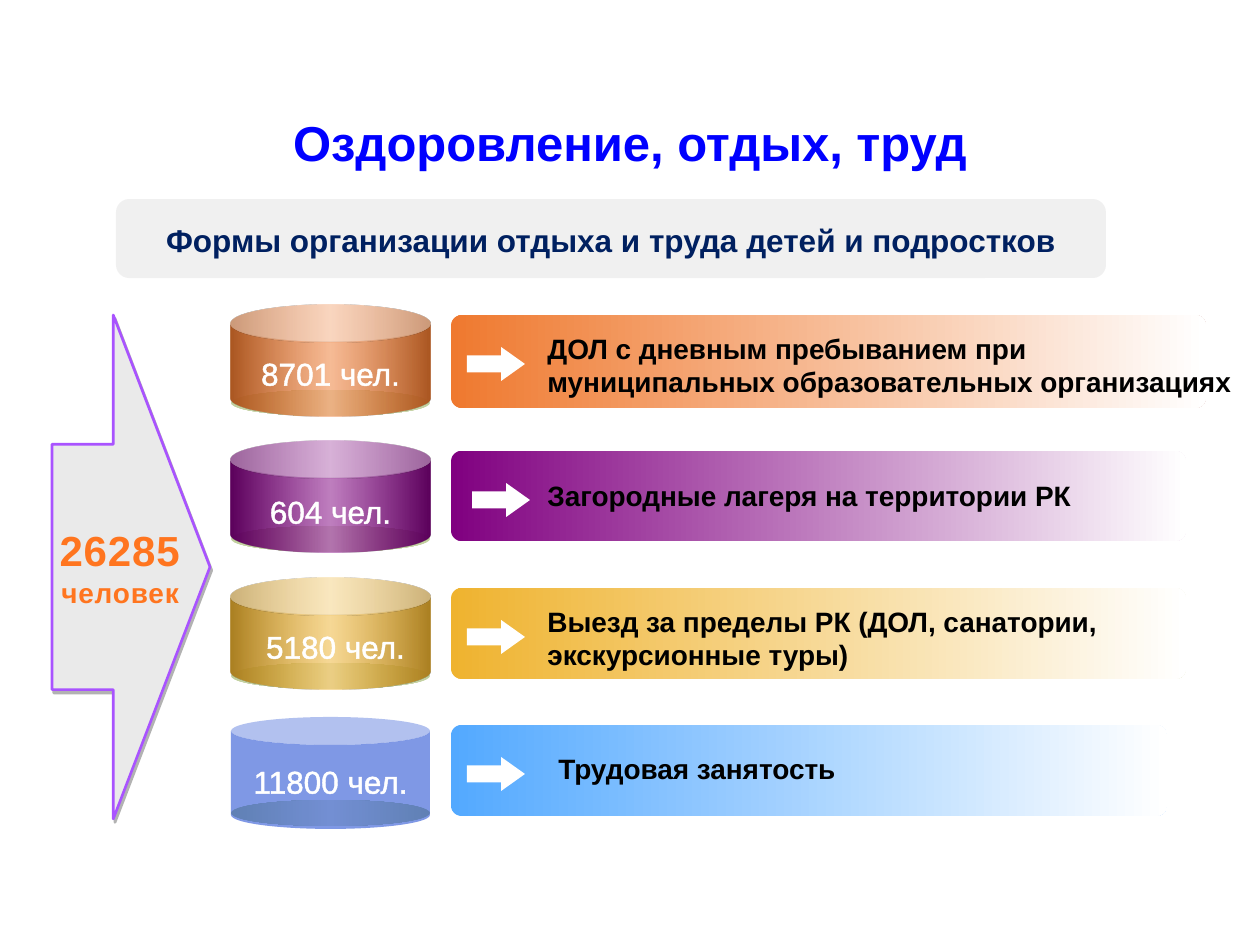
from dataclasses import dataclass

from pptx import Presentation
from pptx import util as u
from pptx.dml.color import RGBColor
from pptx.enum import shapes, text
from pptx.oxml import ns, parse_xml

EMU_PER_PX = 914400 / 126
KIND = shapes.MSO_SHAPE


@dataclass(frozen=True)
class Theme:
    font: str = "Arial"
    white: str = "FFFFFF"
    ink: str = "000000"
    title: str = "0000FF"
    header: str = "002060"
    panel: str = "D9D9D9"
    total: str = "FF751F"
    arrow: str = "EAEAEA"
    arrow_line: str = "A953FF"
    shadow: str = "B2B2B2"
    base: tuple = ((0, "C1CF9D"), (50, "E7ECDC"), (100, "C1CF9D"))
    title_size: int = 28
    total_size: int = 24
    value_size: int = 18
    label_size: int = 16


THEME = Theme()


@dataclass(frozen=True)
class Row:
    value: str
    label: str
    color: str
    edge: str
    bar_width: int
    bar_height: int
    label_box: tuple
    value_left: int = 0
    value_top: int = 43
    arrow_left: int = 236
    can_adj: float = 0.332
    can_top: int = 0


ROWS = (
    Row("8701 чел.", "ДОЛ с дневным пребыванием при муниципальных образовательных организациях",
        "EF792F", "AB5722", 755, 93, (304, 20, 714, 81)),
    Row("604 чел.", "Загородные лагеря на территории РК",
        "800080", "5C005C", 735, 90, (304, 31, 599, 47), value_top=45, arrow_left=241),
    Row("5180 чел.", "Выезд за пределы РК (ДОЛ, санатории, экскурсионные туры)",
        "EFB32F", "AB8022", 735, 91, (304, 20, 651, 81), value_left=5),
    Row("11800 чел.", "Трудовая занятость",
        "53A9FF", "0033CC", 716, 91, (315, 30, 418, 47), value_top=41, can_adj=0.25, can_top=2),
)


def px(length):
    return u.Emu(round(length * EMU_PER_PX))


def place(box):
    return [px(length) for length in box]


def color_xml(color, alpha=100):
    return f'<a:srgbClr val="{color}"><a:alpha val="{alpha * 1000}"/></a:srgbClr>'


def drawing(xml):
    return parse_xml(xml.replace(">", f" {ns.nsdecls('a')}>", 1))


def add_shape(slide, kind, box, fill=None, alpha=100, stops=None, adjust=()):
    shape = slide.shapes.add_shape(kind, *place(box))
    shape.shadow.inherit = False
    shape.line.fill.background()
    for index, value in enumerate(adjust):
        shape.adjustments[index] = value
    if stops:
        marks = "".join(f'<a:gs pos="{stop[0] * 1000}">{color_xml(*stop[1:])}</a:gs>' for stop in stops)
        paint = f'<a:gradFill><a:gsLst>{marks}</a:gsLst><a:lin ang="0" scaled="1"/></a:gradFill>'
    else:
        paint = f"<a:solidFill>{color_xml(fill, alpha)}</a:solidFill>"
    shape.element.spPr.find(ns.qn("a:prstGeom")).addnext(drawing(paint))
    return shape


def add_text(slide, box, words, *style, **options):
    area = slide.shapes.add_textbox(*place(box))
    return write(area, words, *style, **options)


def write(shape, words, size, color, bold=True, align=text.PP_ALIGN.LEFT, wrap=True):
    frame = shape.text_frame
    frame.text = words
    frame.word_wrap = wrap
    paragraph = frame.paragraphs[0]
    paragraph.alignment = align
    paragraph.space_before = u.Pt(0)
    for run in paragraph.runs:
        run.font.name = THEME.font
        run.font.size = u.Pt(size)
        run.font.bold = bold
        run.font.color.rgb = RGBColor.from_string(color)
    return frame


def title_region(slide, box):
    title = slide.shapes.title
    title.left, title.top, title.width, title.height = place(box)
    white = RGBColor.from_string(THEME.white)
    title.fill.solid()
    title.fill.fore_color.rgb = white
    title.line.color.rgb = white
    title.line.width = u.Pt(0.75)
    frame = write(title, "Оздоровление, отдых, труд", THEME.title_size, THEME.title,
                  align=text.PP_ALIGN.CENTER)
    frame.vertical_anchor = text.MSO_ANCHOR.MIDDLE
    frame.margin_top = px(7)


def header_region(slide, box):
    panel = add_shape(slide, KIND.ROUNDED_RECTANGLE, box, THEME.panel, alpha=39, adjust=(0.167,))
    frame = write(panel, "Формы организации отдыха и труда детей и подростков",
                  THEME.value_size, THEME.header, align=text.PP_ALIGN.CENTER)
    frame.vertical_anchor = text.MSO_ANCHOR.MIDDLE
    frame.margin_top = px(8)


def total_region(slide, box):
    arrow = add_shape(slide, KIND.RIGHT_ARROW, box, THEME.arrow, adjust=(0.487, 0.612))
    arrow.line.color.rgb = RGBColor.from_string(THEME.arrow_line)
    arrow.line.width = u.Pt(1.5)
    effects = arrow.element.spPr.find(ns.qn("a:effectLst"))
    effects.append(drawing(f'<a:outerShdw dist="27940" dir="3780000">{color_xml(THEME.shadow)}</a:outerShdw>'))
    frame = write(arrow, "26285\vчеловек", THEME.total_size, THEME.total,
                  align=text.PP_ALIGN.CENTER, wrap=False)
    frame.vertical_anchor = text.MSO_ANCHOR.MIDDLE
    frame.margin_left = px(38)
    count, unit = frame.paragraphs[0].runs
    unit.font.size = u.Pt(THEME.label_size)
    for run in (count, unit):
        run.font._element.set("spc", "50")


def outline(run):
    line = f'<a:ln w="18415"><a:solidFill>{color_xml(THEME.white)}</a:solidFill></a:ln>'
    run.font._element.insert(0, drawing(line))


def row_region(slide, left, top, row):
    add_shape(slide, KIND.ROUNDED_RECTANGLE, (left + 220, top + 10, row.bar_width, row.bar_height),
              stops=((0, row.color), (100, THEME.white)), adjust=(0.115,))
    label_left, label_top, width, height = row.label_box
    add_text(slide, (left + label_left, top + label_top, width, height), row.label,
             THEME.label_size, THEME.ink)
    add_shape(slide, KIND.RIGHT_ARROW, (left + row.arrow_left, top + 42, 58, 34), THEME.white,
              adjust=(0.5, 0.701))
    add_shape(slide, KIND.OVAL, (left, top + 85, 199, 26), stops=THEME.base)
    can_box = (left, top + row.can_top, 199, 112)
    if row.can_top:
        add_shape(slide, KIND.CAN, can_box, row.edge, alpha=50, adjust=(row.can_adj,))
    else:
        add_shape(slide, KIND.CAN, can_box, adjust=(row.can_adj,),
                  stops=((0, row.edge), (50, row.color, 50), (100, row.edge)))
    frame = add_text(slide, (left + row.value_left, top + row.value_top, 199, 50), row.value,
                     THEME.value_size, THEME.white, bold=False, align=text.PP_ALIGN.CENTER,
                     wrap=False)
    outline(frame.paragraphs[0].runs[0])


def main():
    deck = Presentation()
    deck.slide_width, deck.slide_height = px(1260), px(945)
    slide = deck.slides.add_slide(deck.slide_layouts[5])
    title_region(slide, (0, 105, 1260, 73))
    header_region(slide, (116, 199, 990, 79))
    for index, row in enumerate(ROWS):
        row_region(slide, 231, 305 + round(index * 136.5), row)
    total_region(slide, (52, 315, 158, 504))
    deck.save("out.pptx")


if __name__ == "__main__":
    main()
